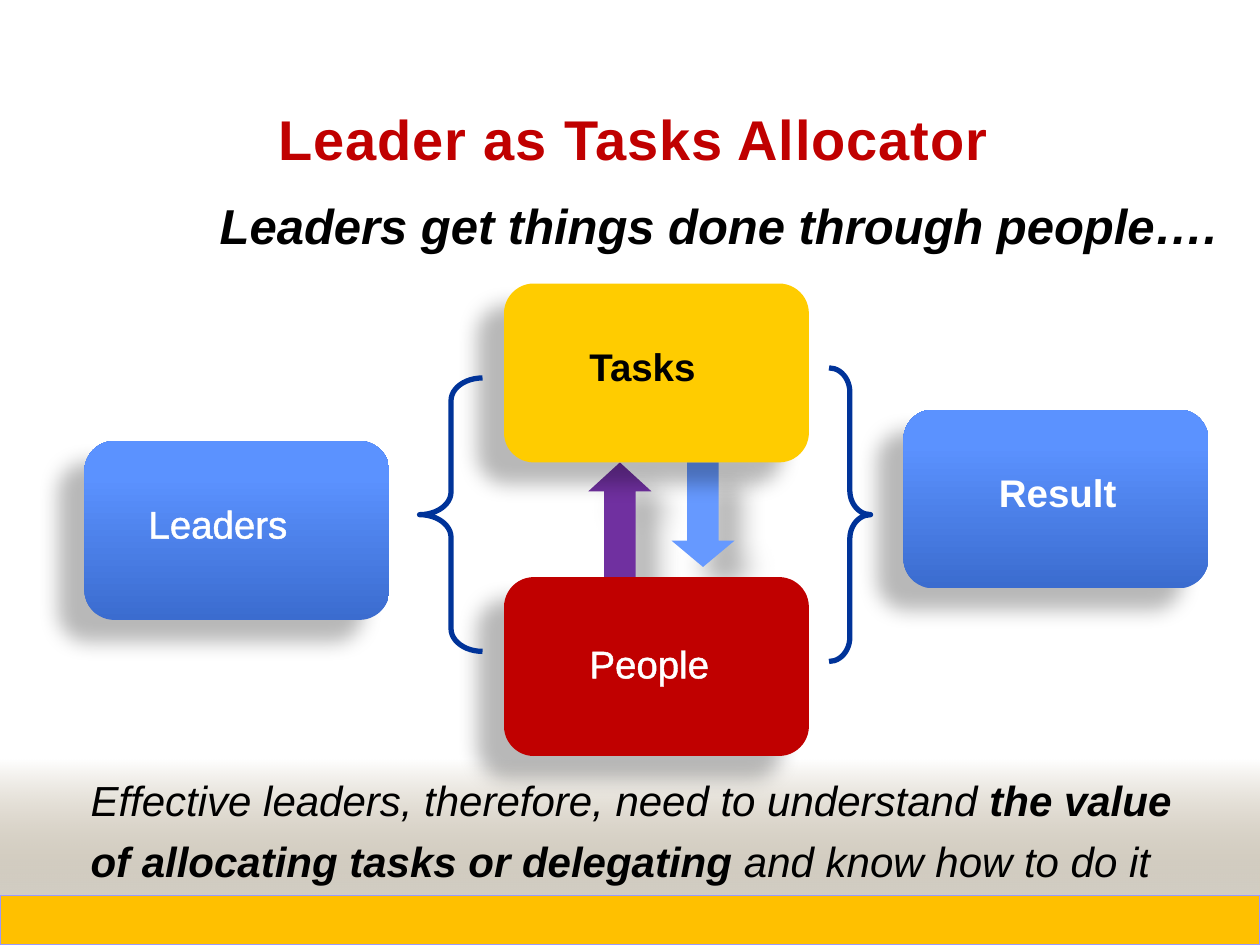
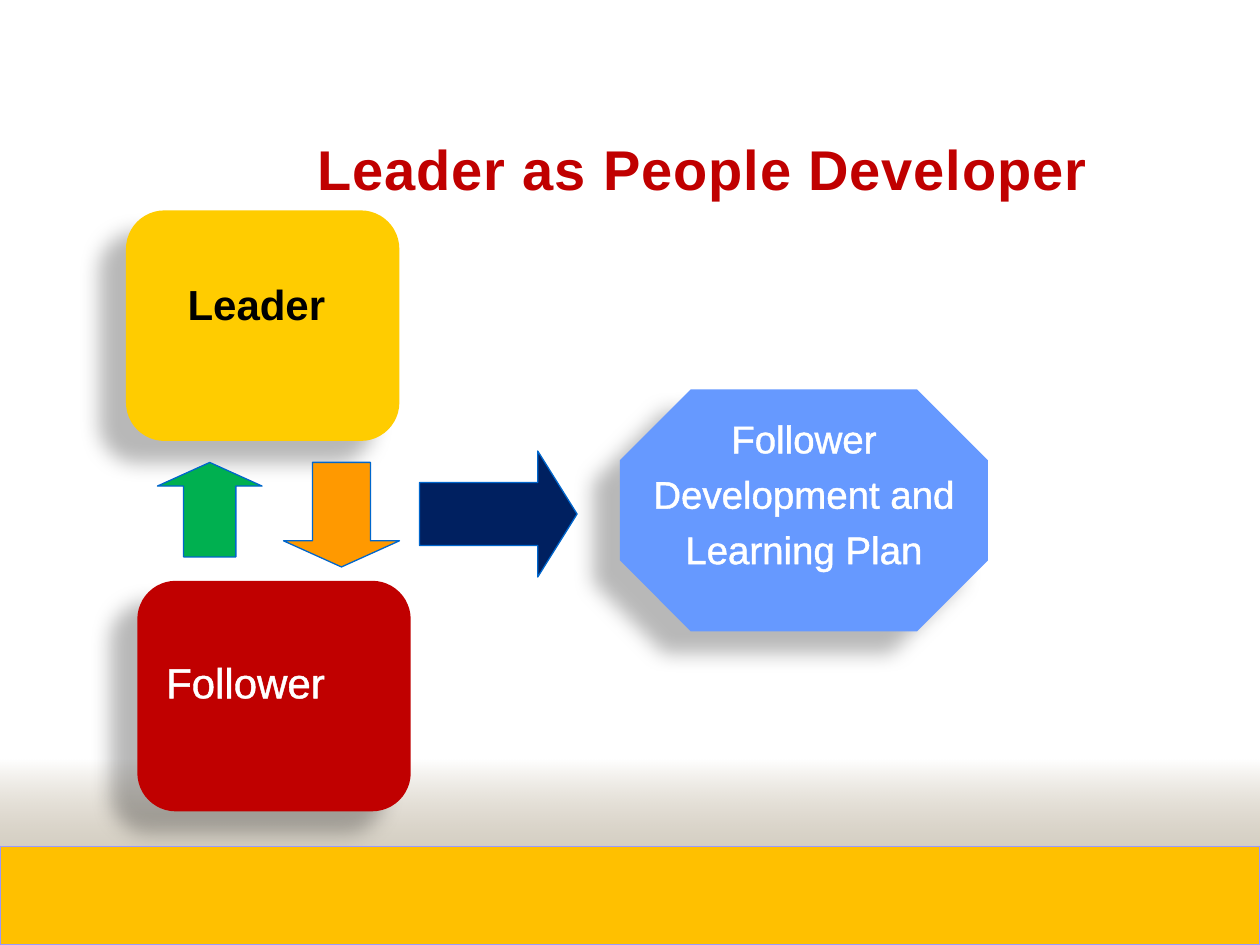
from dataclasses import dataclass

from pptx import Presentation
from pptx.dml.color import RGBColor
from pptx.enum.shapes import MSO_SHAPE
from pptx.enum.text import MSO_ANCHOR, MSO_AUTO_SIZE, PP_ALIGN
from pptx.oxml import parse_xml
from pptx.oxml.ns import nsdecls, qn
from pptx.util import Inches, Pt


@dataclass(frozen=True)
class Theme:
    font: str = "Arial"
    # Type sizes
    title: int = 32
    lead: int = 28
    body: int = 24
    label: int = 22
    # Colours
    black: str = "000000"
    white: str = "FFFFFF"
    red: str = "C00000"
    yellow: str = "FFCC00"
    gold: str = "FFC000"
    gold_edge: str = "9999FF"
    sky: str = "6699FF"
    purple: str = "7030A0"
    green: str = "00B050"
    orange: str = "FF9900"
    navy: str = "002060"
    brace: str = "003399"
    arrow_edge: str = "0066CC"
    # Gradients: angle, then stops of position, colour and opacity
    glossy: tuple = (270, (0, "3B6CCF", 100), (80, "5B92FF", 100), (100, "5D93FF", 100))
    ground: tuple = (90, (0, "765E2F", 0), (100, "DDDDDD", 100))
    # Shadows: opacity, blur, distance, direction
    box_shadow: tuple = (28, 11.8, 19.7, 141)
    arrow_shadow: tuple = (30, 15, 18, 45)


THEME = Theme()
WIDTH, HEIGHT = 10, 7.5
GROUND_HEIGHT = 1.47


class Deck:
    def __init__(self, theme):
        self.theme = theme
        self.presentation = Presentation()
        self.presentation.slide_width = Inches(WIDTH)
        self.presentation.slide_height = Inches(HEIGHT)
        self.slide = None

    def start_slide(self, title, at):
        """Add a slide with the shaded ground and the title."""
        layout = self.presentation.slide_layouts[5]
        self.slide = self.presentation.slides.add_slide(layout)
        self.shape(MSO_SHAPE.RECTANGLE, (0, HEIGHT - GROUND_HEIGHT, WIDTH, GROUND_HEIGHT),
                   self.theme.ground)
        heading = self.slide.shapes.title
        heading.left, heading.top, heading.width, heading.height = map(Inches, at)
        self.set_text(heading, [(title, True)], self.theme.title, self.theme.red, wrap=False)
        for run in heading.text_frame.paragraphs[0].runs:
            run._r.get_or_add_rPr().set("spc", "50")

    def shape(self, kind, at, fill=None, edge=None, edge_width=0.75, adjust=(), shadow=None):
        item = self.slide.shapes.add_shape(kind, *map(Inches, at))
        for index, value in enumerate(adjust):
            item.adjustments[index] = value
        if fill is None:
            item.fill.background()
        else:
            item.fill.solid()
            if isinstance(fill, tuple):
                self.gradient(item, fill)
            else:
                item.fill.fore_color.rgb = RGBColor.from_string(fill)
        if edge:
            item.line.color.rgb = RGBColor.from_string(edge)
            item.line.width = Pt(edge_width)
        else:
            item.line.fill.background()
        item.shadow.inherit = False
        if shadow:
            self.cast_shadow(item, shadow)

    def gradient(self, item, fill):
        angle, *stops = fill
        marks = "".join(
            f'<a:gs pos="{position * 1000}"><a:srgbClr val="{colour}">'
            f'<a:alpha val="{opacity * 1000}"/></a:srgbClr></a:gs>'
            for position, colour, opacity in stops)
        properties = item._element.spPr
        properties.replace(properties.find(qn("a:solidFill")), parse_xml(
            f'<a:gradFill {nsdecls("a")} rotWithShape="1"><a:gsLst>{marks}</a:gsLst>'
            f'<a:lin ang="{angle * 60000}" scaled="0"/></a:gradFill>'))

    def cast_shadow(self, item, shadow):
        opacity, blur, distance, direction = shadow
        item._element.spPr.find(qn("a:effectLst")).append(parse_xml(
            f'<a:outerShdw {nsdecls("a")} blurRad="{Pt(blur)}" dist="{Pt(distance)}" '
            f'dir="{direction * 60000}" algn="ctr" rotWithShape="0">'
            f'<a:srgbClr val="{self.theme.black}"><a:alpha val="{opacity * 1000}"/>'
            f'</a:srgbClr></a:outerShdw>'))

    def box(self, at, fill, kind=MSO_SHAPE.ROUNDED_RECTANGLE, corner=0.167):
        self.shape(kind, at, fill, adjust=[corner], shadow=self.theme.box_shadow)

    def arrow(self, kind, at, fill, head, edge=None, shadow=None):
        self.shape(kind, at, fill, edge, adjust=[0.5, head], shadow=shadow)

    def brace(self, kind, at, curl):
        self.shape(kind, at, edge=self.theme.brace, edge_width=3, adjust=[curl, 0.5])

    def footer(self, height):
        self.shape(MSO_SHAPE.RECTANGLE, (0, HEIGHT - height, WIDTH, height),
                   self.theme.gold, self.theme.gold_edge)

    def text(self, at, parts, size, colour, **style):
        item = self.slide.shapes.add_textbox(*map(Inches, at))
        self.set_text(item, parts, size, colour, **style)

    def label(self, at, words, size, colour=THEME.white, bold=False, **style):
        """Name a box; plain labels carry a thin outline in their own colour."""
        style.setdefault("wrap", False)
        self.text(at, [(words, bold)], size, colour, outlined=not bold, **style)

    def set_text(self, item, parts, size, colour, align=PP_ALIGN.LEFT, spacing=1.0,
                 italic=False, wrap=True, outlined=False):
        frame = item.text_frame
        frame.word_wrap = wrap
        frame.auto_size = MSO_AUTO_SIZE.SHAPE_TO_FIT_TEXT
        frame.vertical_anchor = MSO_ANCHOR.TOP
        paragraph = frame.paragraphs[0]
        paragraph.alignment = align
        paragraph.line_spacing = spacing
        font = paragraph.font
        font.name, font.size, font.italic = self.theme.font, Pt(size), italic
        font.color.rgb = RGBColor.from_string(colour)
        for words, bold in parts:
            run = paragraph.add_run()
            run.text = words
            run.font.bold = bold
            if outlined:
                run._r.get_or_add_rPr().insert(0, parse_xml(
                    f'<a:ln {nsdecls("a")} w="{Pt(1.45)}"><a:solidFill>'
                    f'<a:srgbClr val="{colour}"/></a:solidFill></a:ln>'))


def build_allocator(deck):
    theme = deck.theme
    deck.start_slide("Leader as Tasks Allocator", (2.11, 0.78, 5.88, 0.64))

    # Exchange between tasks and people
    deck.arrow(MSO_SHAPE.UP_ARROW, (4.67, 3.67, 0.5, 0.92), theme.purple, 0.458,
               shadow=theme.arrow_shadow)
    deck.arrow(MSO_SHAPE.DOWN_ARROW, (5.33, 3.67, 0.5, 0.83), theme.sky, 0.417,
               shadow=theme.arrow_shadow)

    # Four boxes of equal size
    for left, top, fill in [(4, 4.58, theme.red), (7.17, 3.25, theme.glossy),
                            (0.67, 3.5, theme.glossy), (4, 2.25, theme.yellow)]:
        deck.box((left, top, 2.42, 1.42), fill)

    deck.text((1.09, 1.41, 8.67, 0.67), [("Leaders get things done through people….", True)],
              theme.lead, theme.black, align=PP_ALIGN.RIGHT, spacing=1.2, italic=True)

    for words, left, top, width, colour, bold in [
            ("Leaders", 1.08, 3.92, 1.32, theme.white, False),
            ("Tasks", 4.58, 2.67, 1.07, theme.black, True),
            ("People", 4.58, 5.03, 1.2, theme.white, False),
            ("Result", 7.83, 3.67, 1.22, theme.white, True)]:
        deck.label((left, top, width, 0.47), words, theme.label, colour, bold)

    # Braces around the middle column
    deck.brace(MSO_SHAPE.LEFT_BRACE, (3.33, 3, 0.5, 2.17), 0.361)
    deck.brace(MSO_SHAPE.RIGHT_BRACE, (6.58, 2.92, 0.33, 2.33), 0.583)

    # Conclusion
    deck.text((0.62, 6.02, 8.92, 1.07),
              [("Effective leaders, therefore, need to understand ", False),
               ("the value of allocating tasks or delegating", True),
               (" and know how to do it", False)],
              theme.body, theme.black, spacing=1.2, italic=True)
    deck.footer(0.39)


def build_developer(deck):
    theme = deck.theme
    deck.start_slide("Leader as People Developer", (2.42, 1.02, 6.36, 0.64))

    # Plan, leader and follower
    deck.box((4.92, 3.09, 2.92, 1.92), theme.sky, MSO_SHAPE.OCTAGON, 0.293)
    deck.box((1, 1.67, 2.17, 1.83), theme.yellow)
    deck.box((1.09, 4.61, 2.17, 1.83), theme.red)
    deck.label((1.39, 2.08, 1.3, 0.58), "Leader", theme.body, theme.black, True, spacing=1.2)
    deck.label((1.22, 5.08, 1.57, 0.59), "Follower", theme.body, spacing=1.2)
    deck.label((4.92, 3.17, 2.92, 1.43), "Follower Development and Learning Plan",
               theme.label, align=PP_ALIGN.CENTER, spacing=1.2, wrap=True)

    # Arrows between them
    for kind, at, fill, head in [
            (MSO_SHAPE.UP_ARROW, (1.25, 3.67, 0.83, 0.75), theme.green, 0.25),
            (MSO_SHAPE.DOWN_ARROW, (2.25, 3.67, 0.92, 0.83), theme.orange, 0.25),
            (MSO_SHAPE.RIGHT_ARROW, (3.33, 3.58, 1.25, 1), theme.navy, 0.312)]:
        deck.arrow(kind, at, fill, head, edge=theme.arrow_edge)
    deck.footer(0.78)


def main():
    deck = Deck(THEME)
    build_allocator(deck)
    build_developer(deck)
    deck.presentation.save("out.pptx")


if __name__ == "__main__":
    main()
